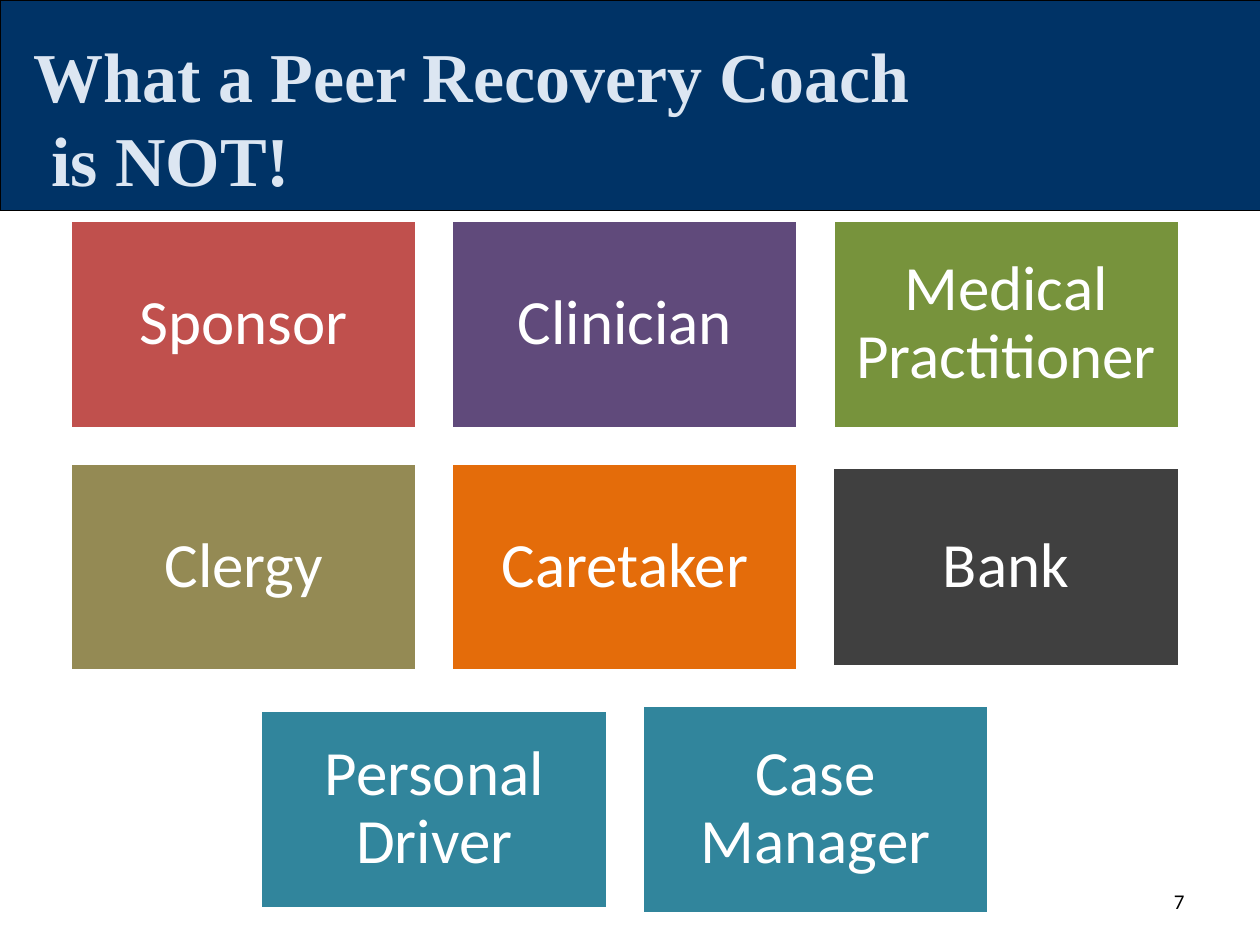
from pptx import Presentation
from pptx.dml.color import RGBColor
from pptx.enum.shapes import MSO_SHAPE as Shape
from pptx.enum.text import MSO_ANCHOR as Anchor, PP_ALIGN as Align
from pptx.util import Inches, Pt

TITLE = ["What a Peer Recovery Coach", " is NOT!"]
PAGE_NUMBER = "7"
FULL, SHORT = (2.75, 1.65), (2.76, 1.58)
ROWS = [
    [("Sponsor", "C0504D", FULL), ("Clinician", "604A7B", FULL),
     ("Medical Practitioner", "77933C", FULL)],
    [("Clergy", "948A54", FULL), ("Caretaker", "E46C0A", FULL),
     ("Bank", "404040", SHORT)],
    [("Personal Driver", "31859C", SHORT), ("Case Manager", "31859C", FULL)],
]
GRID_CENTER, GRID_TOP, GAP = 4.96, 1.75, 0.275


def color(value):
    return RGBColor.from_string(value)


def add_box(page, left, top, width, height, fill, line, weight):
    box = page.shapes.add_shape(
        Shape.RECTANGLE, Inches(left), Inches(top), Inches(width), Inches(height))
    box.shadow.inherit = False
    box.fill.solid()
    box.fill.fore_color.rgb = color(fill)
    box.line.color.rgb = color(line)
    box.line.width = Pt(weight)
    return box


def add_text_box(page, left, top, width, height):
    return page.shapes.add_textbox(
        Inches(left), Inches(top), Inches(width), Inches(height))


def write(box, lines, size, font, ink, align, bold=False):
    frame = box.text_frame
    frame.word_wrap = True
    frame.vertical_anchor = Anchor.MIDDLE
    para = frame.paragraphs[0]
    para.alignment = align
    for index, line in enumerate(lines):
        if index:
            para.add_line_break()
        span = para.add_run()
        span.text = line
        span.font.size = Pt(size)
        span.font.name = font
        span.font.bold = bold
        span.font.color.rgb = color(ink)
    return frame


def add_card(page, label, fill, size, center_x, center_y):
    width, height = size
    card = add_box(page, center_x - width / 2, center_y - height / 2,
                   width, height, fill, "FFFFFF", 2)
    frame = write(card, [label], 36, "Calibri", "FFFFFF", Align.CENTER)
    frame.margin_left = frame.margin_right = Inches(0.15)
    frame.margin_top = frame.margin_bottom = Inches(0.15)
    frame.paragraphs[0].line_spacing = 0.9


def main():
    deck = Presentation()
    deck.slide_width, deck.slide_height = Inches(10), Inches(7.5)
    page = deck.slides.add_slide(deck.slide_layouts[6])

    add_box(page, 0, 0, 10.02, 1.67, "003366", "000000", 0.75)
    title = add_text_box(page, 0.17, 0.3, 8.17, 1.25)
    write(title, TITLE, 40, "Times New Roman", "DCE6F2", Align.LEFT, bold=True)

    width, height = FULL
    for row, cards in enumerate(ROWS):
        center_y = GRID_TOP + height / 2 + row * (height + GAP)
        for column, (label, fill, size) in enumerate(cards):
            offset = column - (len(cards) - 1) / 2
            center_x = GRID_CENTER + offset * (width + GAP)
            add_card(page, label, fill, size, center_x, center_y)

    number = add_text_box(page, 7.17, 6.95, 2.33, 0.4)
    write(number, [PAGE_NUMBER], 12, "Calibri", "000000", Align.RIGHT)
    deck.save("out.pptx")


if __name__ == "__main__":
    main()
